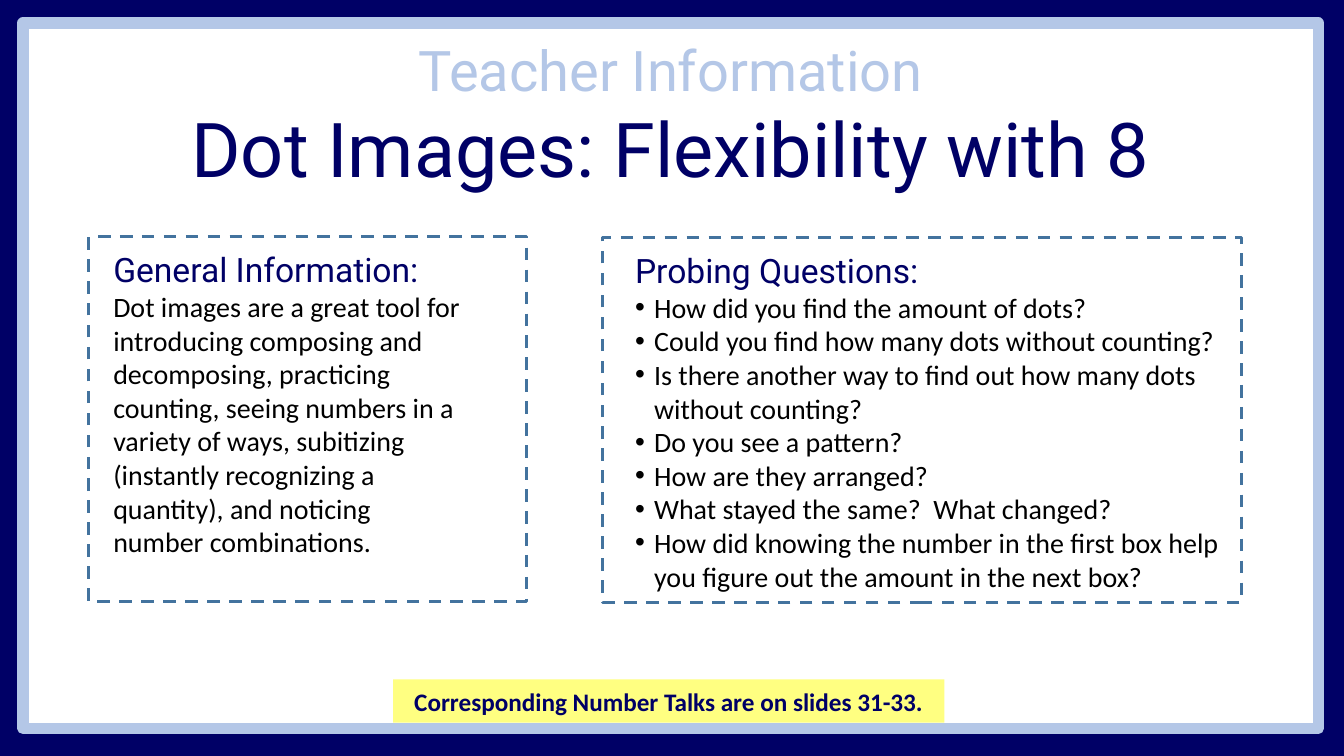
from lxml.etree import SubElement
from pptx import Presentation
from pptx.dml.color import RGBColor
from pptx.enum.dml import MSO_LINE
from pptx.enum.shapes import MSO_SHAPE
from pptx.enum.text import MSO_ANCHOR, MSO_AUTO_SIZE, PP_ALIGN
from pptx.oxml.ns import qn
from pptx.util import Cm, Pt

NAVY = RGBColor(0x00, 0x00, 0x66)
PALE_BLUE = RGBColor(0xB4, 0xC7, 0xE7)
STEEL_BLUE = RGBColor(0x43, 0x73, 0x9E)
YELLOW = RGBColor(0xFF, 0xFF, 0x81)
WHITE = RGBColor(0xFF, 0xFF, 0xFF)
BLACK = RGBColor(0x00, 0x00, 0x00)

FRAME = (0.58, 0.58, 32.64, 17.78)
TITLE = (0.58, 0.76, 32.64, 4.27)
GENERAL = (2.24, 5.97, 11.02, 9.19)
PROBING = (15.19, 5.99, 16.1, 9.19)
NOTE = (9.91, 17.12, 13.89, 1.09)

INFORMATION = [
    "Dot images are a great tool for introducing composing and decomposing, "
    "practicing counting, seeing numbers in a variety of ways, subitizing "
    "(instantly recognizing a quantity), and noticing number combinations.",
]
QUESTIONS = [
    "How did you find the amount of dots?",
    "Could you find how many dots without counting?",
    "Is there another way to find out how many dots without counting?",
    "Do you see a pattern?",
    "How are they arranged?",
    "What stayed the same?  What changed?",
    "How did knowing the number in the first box help you figure out the amount in the next box?",
]


def set_bullet(para, bullet):
    """Give the paragraph a hanging bullet, or switch the inherited one off."""
    properties = para._p.get_or_add_pPr()
    indent = Cm(0.48) if bullet else 0
    properties.set("marL", str(indent))
    properties.set("indent", str(-indent))
    if bullet:
        SubElement(properties, qn("a:buFont")).set("typeface", "Arial")
        SubElement(properties, qn("a:buChar")).set("char", bullet)
    else:
        SubElement(properties, qn("a:buNone"))


def write(frame, text, *, size, color, font="Calibri", bold=False,
          align=PP_ALIGN.LEFT, bullet=None):
    """Fill the empty first paragraph, or add one after the last."""
    first = frame.paragraphs[0]
    para = frame.add_paragraph() if first.runs else first
    para.alignment = align
    para.space_before = Pt(0)
    set_bullet(para, bullet)
    span = para.add_run()
    span.text = text
    span.font.name = font
    span.font.size = Pt(size)
    span.font.bold = bold
    span.font.color.rgb = color


def place(holder, left, top, width, height):
    """Move a placeholder and return its top-anchored text frame."""
    holder.left, holder.top = Cm(left), Cm(top)
    holder.width, holder.height = Cm(width), Cm(height)
    frame = holder.text_frame
    frame.word_wrap = True
    frame.auto_size = MSO_AUTO_SIZE.NONE
    frame.vertical_anchor = MSO_ANCHOR.TOP
    return frame


def add_rectangle(page, box, fill=None, line=None, weight=0):
    shape = page.shapes.add_shape(MSO_SHAPE.RECTANGLE, *map(Cm, box))
    shape.shadow.inherit = False
    if fill is None:
        shape.fill.background()
    else:
        shape.fill.solid()
        shape.fill.fore_color.rgb = fill
    if line is None:
        shape.line.fill.background()
    else:
        shape.line.color.rgb = line
        shape.line.width = Pt(weight)
    return shape


def add_backdrop(page, box):
    page.background.fill.solid()
    page.background.fill.fore_color.rgb = NAVY
    sheet = add_rectangle(page, box, WHITE, PALE_BLUE, 8)
    page.shapes.element.insert(2, sheet.element)  # behind the placeholders


def add_title(holder, box):
    frame = place(holder, *box)
    style = {"font": "Roboto", "align": PP_ALIGN.CENTER}
    write(frame, "Teacher Information", size=40, color=PALE_BLUE, **style)
    write(frame, "Dot Images: Flexibility with 8", size=54, color=NAVY, **style)


def add_panel(page, holder, box, heading, lines, text_left, text_width, bullet=None):
    """Dashed panel with a heading and lines; text_left is measured from its edge."""
    left, top, _, height = box
    frame = place(holder, left + text_left, top + 0.18, text_width, height - 0.18)
    write(frame, heading, size=24, color=NAVY, font="Roboto")
    for line in lines:
        write(frame, line, size=20, color=BLACK, bullet=bullet)
    border = add_rectangle(page, box, line=STEEL_BLUE, weight=2.25)
    border.line.dash_style = MSO_LINE.DASH


def add_note(page, box):
    frame = add_rectangle(page, box, YELLOW).text_frame
    frame.word_wrap = True
    frame.vertical_anchor = MSO_ANCHOR.MIDDLE
    write(frame, "Corresponding Number Talks are on slides 31-33.",
          size=18, color=NAVY, bold=True, align=PP_ALIGN.CENTER)


def main():
    deck = Presentation()
    deck.slide_width, deck.slide_height = Cm(33.87), Cm(19.05)
    page = deck.slides.add_slide(deck.slide_layouts.get_by_name("Two Content"))
    title, general, probing = page.placeholders
    add_backdrop(page, FRAME)
    add_title(title, TITLE)
    add_panel(page, general, GENERAL, "General Information:", INFORMATION, 0.36, 9.42)
    add_panel(page, probing, PROBING, "Probing Questions:", QUESTIONS, 0.56, 15.42, "•")
    add_note(page, NOTE)
    deck.save("out.pptx")


if __name__ == "__main__":
    main()
